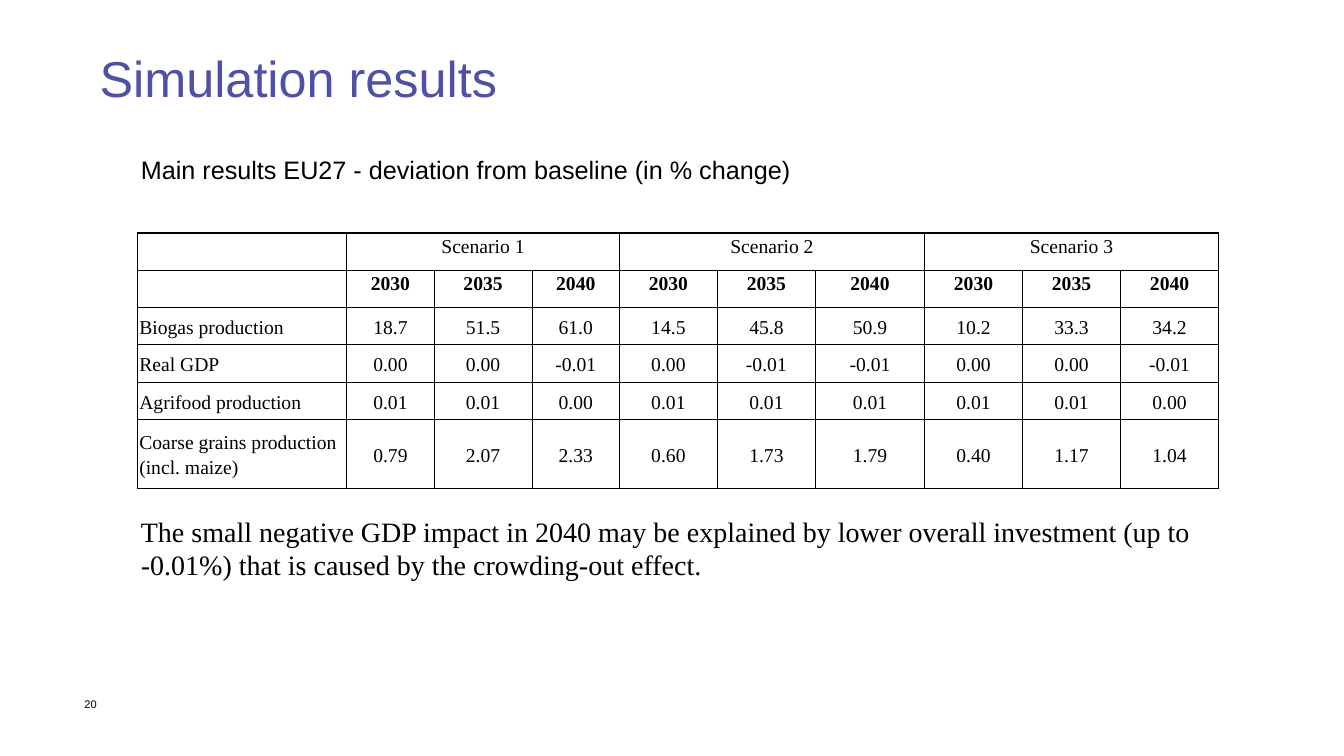
from lxml import etree
from pptx import Presentation
from pptx.dml.color import RGBColor
from pptx.enum.text import MSO_ANCHOR, PP_ALIGN
from pptx.oxml.ns import qn
from pptx.util import Cm, Pt

TOP, MIDDLE = MSO_ANCHOR.TOP, MSO_ANCHOR.MIDDLE
LEFT, CENTER = PP_ALIGN.LEFT, PP_ALIGN.CENTER
SANS, SERIF = "Arial", "Times New Roman"
BLACK, VIOLET = "000000", "4E51A5"

SCENARIOS = ["Scenario 1", "Scenario 2", "Scenario 3"]
YEARS = ["2030", "2035", "2040"]
RESULTS = [
    ("Biogas production", "18.7 51.5 61.0 14.5 45.8 50.9 10.2 33.3 34.2"),
    ("Real GDP", "0.00 0.00 -0.01 0.00 -0.01 -0.01 0.00 0.00 -0.01"),
    ("Agrifood production", "0.01 0.01 0.00 0.01 0.01 0.01 0.01 0.01 0.00"),
    ("Coarse grains production (incl. maize)",
     "0.79 2.07 2.33 0.60 1.73 1.79 0.40 1.17 1.04"),
]
COLUMN_WIDTHS = [5.28, 2.2, 2.47, 2.2, 2.47, 2.47, 2.75, 2.47, 2.47, 2.47]
ROW_HEIGHTS = [0.94] * 5 + [1.74]


def color(hex_string):
    return RGBColor.from_string(hex_string)


def format_runs(paragraph, size, font_name, hex_string, bold=False):
    for run in paragraph.runs:
        run.font.size = Pt(size)
        run.font.name = font_name
        run.font.bold = bold
        run.font.color.rgb = color(hex_string)


def add_text(slide, box, text, size, font_name, hex_string=BLACK):
    """Add a wrapped text box; box is left, top, width, height in cm."""
    shape = slide.shapes.add_textbox(*map(Cm, box))
    frame = shape.text_frame
    frame.word_wrap = True
    frame.text = text
    format_runs(frame.paragraphs[0], size, font_name, hex_string)
    return frame


def add_title(slide, box):
    frame = add_text(slide, box, "Simulation results", 36, SANS, VIOLET)
    frame.vertical_anchor = MIDDLE
    frame.margin_left = frame.margin_right = frame.margin_bottom = 0
    frame.paragraphs[0].line_spacing = 0.9


def add_borders(cell):
    properties = cell._tc.get_or_add_tcPr()
    for side in ("a:lnL", "a:lnR", "a:lnT", "a:lnB"):
        line = etree.SubElement(properties, qn(side), w=str(Pt(1)))
        fill = etree.SubElement(line, qn("a:solidFill"))
        etree.SubElement(fill, qn("a:srgbClr"), val=BLACK)


def fill_cell(cell, text, alignment, anchor, bold):
    add_borders(cell)
    cell.fill.background()
    cell.margin_left = cell.margin_right = Cm(0.05)
    cell.margin_top = cell.margin_bottom = 0
    cell.vertical_anchor = anchor
    if text:
        cell.text_frame.text = text
        paragraph = cell.text_frame.paragraphs[0]
        paragraph.alignment = alignment
        paragraph.line_spacing = 1.15
        paragraph.space_after = Pt(8)
        format_runs(paragraph, 14, SERIF, BLACK, bold)


def add_results_table(slide, left, top):
    scenario_row = [""]
    for scenario in SCENARIOS:
        scenario_row += [scenario] + [""] * (len(YEARS) - 1)
    rows = [scenario_row, [""] + YEARS * len(SCENARIOS)]
    rows += [[label] + values.split() for label, values in RESULTS]

    table = slide.shapes.add_table(
        len(rows), len(COLUMN_WIDTHS), Cm(left), Cm(top),
        Cm(sum(COLUMN_WIDTHS)), Cm(sum(ROW_HEIGHTS))).table
    table.first_row = table.horz_banding = False
    for column, width in zip(table.columns, COLUMN_WIDTHS):
        column.width = Cm(width)
    for row, height in zip(table.rows, ROW_HEIGHTS):
        row.height = Cm(height)

    for row_index, texts in enumerate(rows):
        anchor = TOP if row_index < 2 else MIDDLE
        for column_index, text in enumerate(texts):
            alignment = CENTER if column_index else LEFT
            fill_cell(table.cell(row_index, column_index), text,
                      alignment, anchor, bold=row_index == 1)
    for first in range(1, len(COLUMN_WIDTHS), len(YEARS)):
        table.cell(0, first).merge(table.cell(0, first + len(YEARS) - 1))


def build_results_slide(presentation):
    slide = presentation.slides.add_slide(presentation.slide_layouts[6])
    add_title(slide, (2.51, 0.89, 22.1, 2.18))
    add_text(slide, (3.3, 3.76, 20.52, 1.02),
             "Main results EU27 - deviation from baseline (in % change)",
             18, SANS)
    add_results_table(slide, 3.46, 5.87)
    add_text(slide, (3.3, 12.83, 27.3, 1.96),
             "The small negative GDP impact in 2040 may be explained by lower "
             "overall investment (up to -0.01%) that is caused by the "
             "crowding-out effect.", 20, SERIF)
    add_text(slide, (1.88, 17.45, 1.14, 0.66), "20", 7.9, SANS)


def main():
    presentation = Presentation()
    presentation.slide_width = Cm(33.87)
    presentation.slide_height = Cm(19.05)
    build_results_slide(presentation)
    presentation.save("out.pptx")


if __name__ == "__main__":
    main()
